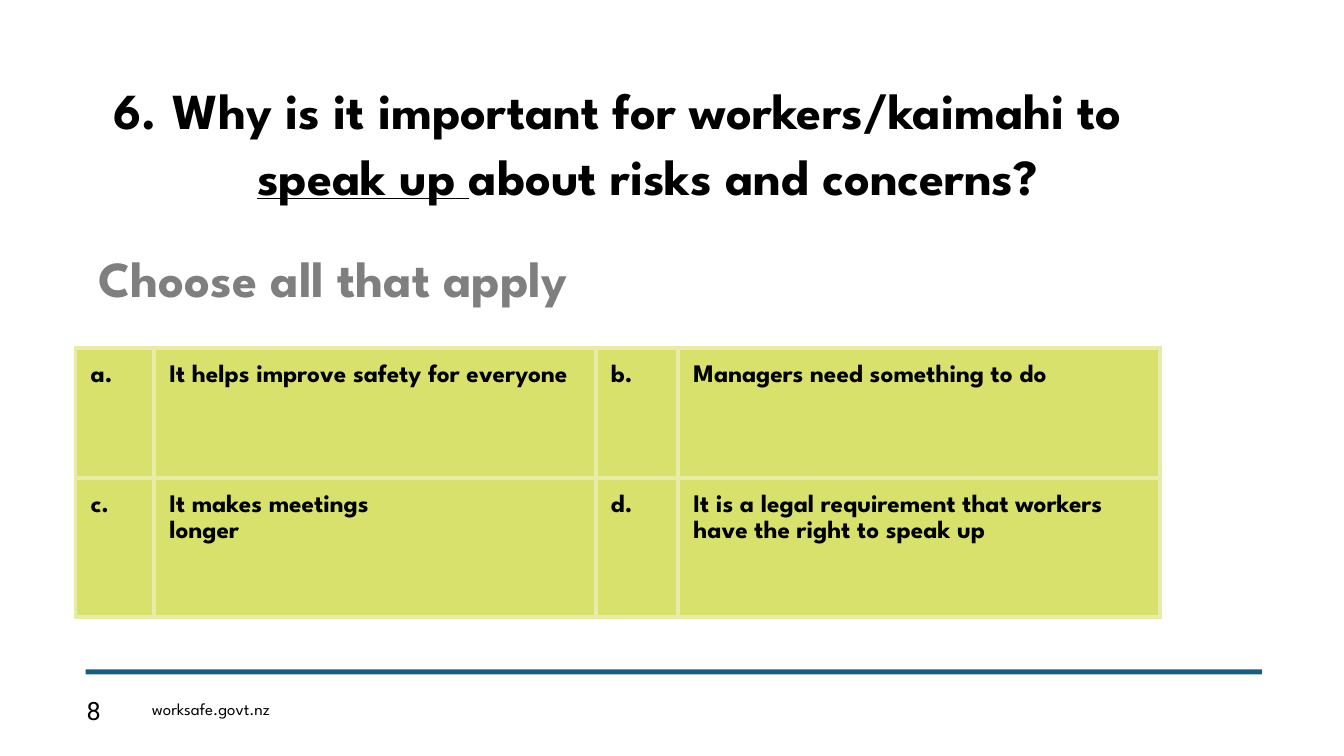
from lxml.etree import SubElement
from pptx import Presentation
from pptx.dml.color import RGBColor
from pptx.enum.shapes import MSO_SHAPE
from pptx.enum.text import MSO_ANCHOR, PP_ALIGN
from pptx.oxml.ns import qn
from pptx.util import Pt

QUESTION_NUMBER = 6
QUESTION = [
    ("Why is it important for workers/kaimahi to ", False),
    ("speak up ", True),
    ("about risks and concerns?", False),
]
INSTRUCTION = "Choose all that apply"
ANSWERS = [
    ["a.", "It helps improve safety for everyone", "b.", "Managers need something to do"],
    ["c.", "It makes meetings\nlonger", "d.",
     "It is a legal requirement that workers have the right to speak up"],
]
PAGE_NUMBER = "8"
WEBSITE = "worksafe.govt.nz"

HEADING_FONT, NUMBER_FONT = "League Spartan", "Roboto"
BLACK, GREY, BLUE = "000000", "7F7F7F", "156082"
LIME, PALE_LIME = "D7E16C", "E7EDA7"

LEFT, WIDTH = 54, 774.72
COLUMN_WIDTHS = [56.16, 315.36, 59.04, 344.16]
ROW_HEIGHTS = [92.88, 99.36]
CELL_MARGIN = 10.8
BORDER_WIDTH = 3


def color(hex_string):
    return RGBColor.from_string(hex_string)


def style(paragraph, size, hex_string, bold=False, name=HEADING_FONT):
    font = paragraph.font
    font.name, font.size, font.bold = name, Pt(size), bold
    font.color.rgb = color(hex_string)


def add_text_box(slide, left, top, width, height, text=""):
    box = slide.shapes.add_textbox(Pt(left), Pt(top), Pt(width), Pt(height))
    box.text_frame.word_wrap = True
    box.text_frame.text = text
    return box.text_frame


def number_paragraph(paragraph, start, indent):
    properties = paragraph._p.get_or_add_pPr()
    properties.set("marL", str(Pt(indent)))
    properties.set("indent", str(-Pt(indent)))
    SubElement(properties, qn("a:buFont"), typeface="+mj-lt")
    SubElement(properties, qn("a:buAutoNum"), type="arabicPeriod", startAt=str(start))


def add_cell_borders(cell):
    """Draw all four borders; must run before the cell is filled."""
    properties = cell._tc.get_or_add_tcPr()
    for side in ("lnL", "lnR", "lnT", "lnB"):
        line = SubElement(properties, qn(f"a:{side}"), w=str(Pt(BORDER_WIDTH)))
        fill = SubElement(line, qn("a:solidFill"))
        SubElement(fill, qn("a:srgbClr"), val=PALE_LIME)


def add_footer(slide):
    number = add_text_box(slide, LEFT + 0.72, 493.2, 46.8, 28.8, PAGE_NUMBER)
    style(number.paragraphs[0], 18, BLACK, name=NUMBER_FONT)
    website = add_text_box(slide, 101.52, 495.36, 324, 25.92, WEBSITE)
    style(website.paragraphs[0], 12, BLACK)
    rule = slide.shapes.add_shape(
        MSO_SHAPE.RECTANGLE, Pt(61.2), Pt(478.08), Pt(840.24), Pt(3.6))
    rule.shadow.inherit = False
    rule.fill.solid()
    rule.fill.fore_color.rgb = color(BLUE)
    rule.line.fill.background()


def add_question(slide):
    frame = add_text_box(slide, LEFT, 49.68, WIDTH, 99.36)
    frame.margin_left = frame.margin_right = frame.margin_top = frame.margin_bottom = 0
    frame.vertical_anchor = MSO_ANCHOR.MIDDLE
    paragraph = frame.paragraphs[0]
    number_paragraph(paragraph, QUESTION_NUMBER, 42.48)
    paragraph.alignment = PP_ALIGN.CENTER
    paragraph.line_spacing = 1.1
    style(paragraph, 36, BLACK, bold=True)
    for text, underlined in QUESTION:
        run = paragraph.add_run()
        run.text = text
        run.font.underline = underlined


def add_answers(slide):
    table = slide.shapes.add_table(
        len(ANSWERS), len(COLUMN_WIDTHS), Pt(LEFT), Pt(248.4),
        Pt(WIDTH), Pt(sum(ROW_HEIGHTS))).table
    for column, width in zip(table.columns, COLUMN_WIDTHS):
        column.width = Pt(width)
    for row, height, texts in zip(table.rows, ROW_HEIGHTS, ANSWERS):
        row.height = Pt(height)
        for cell, text in zip(row.cells, texts):
            add_cell_borders(cell)
            cell.fill.solid()
            cell.fill.fore_color.rgb = color(LIME)
            cell.margin_left = cell.margin_right = Pt(CELL_MARGIN)
            cell.margin_top = cell.margin_bottom = Pt(CELL_MARGIN)
            cell.text = text
            for paragraph in cell.text_frame.paragraphs:
                paragraph.line_spacing = 1.1
                style(paragraph, 18, BLACK, bold=True)


def main():
    presentation = Presentation()
    presentation.slide_width, presentation.slide_height = Pt(960), Pt(540)
    slide = presentation.slides.add_slide(presentation.slide_layouts[6])
    add_footer(slide)
    add_question(slide)
    add_answers(slide)
    instruction = add_text_box(slide, 63.36, 172.8, 479.52, 51.12, INSTRUCTION)
    style(instruction.paragraphs[0], 36, GREY, bold=True)
    presentation.save("out.pptx")


if __name__ == "__main__":
    main()
